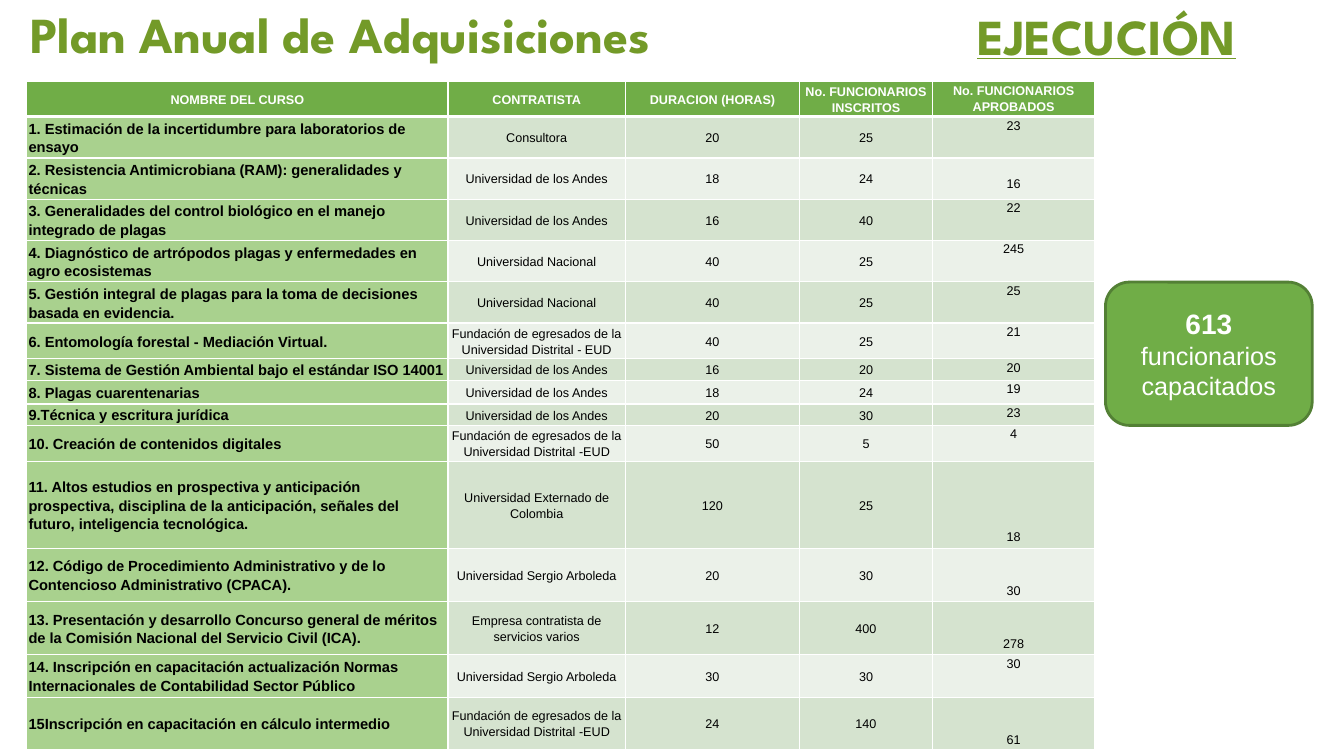
"""Build the annual procurement plan slide with its table of training courses."""
import pptx
import pptx.dml.color
import pptx.enum.shapes
import pptx.enum.text
import pptx.oxml
import pptx.oxml.ns
import pptx.util

Cm = pptx.util.Cm
Pt = pptx.util.Pt
RGBColor = pptx.dml.color.RGBColor
PP_ALIGN = pptx.enum.text.PP_ALIGN
MSO_ANCHOR = pptx.enum.text.MSO_ANCHOR

WHITE = RGBColor(0xFF, 0xFF, 0xFF)
BLACK = RGBColor(0x00, 0x00, 0x00)
OLIVE = RGBColor(0x73, 0x9A, 0x28)
GREEN = RGBColor(0x70, 0xAD, 0x47)
DARK_GREEN = RGBColor(0x53, 0x80, 0x35)
COURSE_GREEN = RGBColor(0xA9, 0xD1, 0x8E)
ODD_BAND = RGBColor(0xD5, 0xE3, 0xCF)
EVEN_BAND = RGBColor(0xEB, 0xF1, 0xE9)

ANDES = "Universidad de los Andes"
NACIONAL = "Universidad Nacional"
ARBOLEDA = "Universidad Sergio Arboleda"
EGRESADOS = "Fundación de egresados de la Universidad Distrital -EUD"

HEADERS = ["NOMBRE DEL CURSO", "CONTRATISTA", "DURACION (HORAS)",
           "No. FUNCIONARIOS\vINSCRITOS", "No. FUNCIONARIOS APROBADOS"]
COLUMN_WIDTHS = [10.62, 4.47, 4.39, 3.35, 4.09]
HEADER_HEIGHT = 0.87
APPROVED_LINE = 0.42

COURSES = [
    (1.04, 0, "1. Estimación de la incertidumbre para laboratorios de ensayo",
     "Consultora", 20, 25, 23),
    (1.04, 1, "2. Resistencia Antimicrobiana (RAM): generalidades y técnicas",
     ANDES, 18, 24, 16),
    (1.04, 0, "3. Generalidades del control biológico en el manejo integrado de plagas",
     ANDES, 16, 40, 22),
    (1.04, 0, "4. Diagnóstico de artrópodos plagas y enfermedades en agro ecosistemas",
     NACIONAL, 40, 25, 245),
    (1.04, 0, "5. Gestión integral de plagas para la toma de decisiones basada en evidencia.",
     NACIONAL, 40, 25, 25),
    (0.9, 0, "6. Entomología forestal - Mediación Virtual.",
     "Fundación de egresados de la Universidad Distrital - EUD", 40, 25, 21),
    (0.54, 0, "7. Sistema de Gestión Ambiental bajo el estándar ISO 14001",
     ANDES, 16, 20, 20),
    (0.6, 0, "8. Plagas cuarentenarias", ANDES, 18, 24, 19),
    (0.54, 0, "9.Técnica y escritura jurídica", ANDES, 20, 30, 23),
    (0.9, 0, "10. Creación de contenidos digitales", EGRESADOS, 50, 5, 4),
    (2.2, 4, "11. Altos estudios en prospectiva y anticipación prospectiva, disciplina "
     "de la anticipación, señales del futuro, inteligencia tecnológica.",
     "Universidad Externado de Colombia", 120, 25, 18),
    (1.34, 2, "12. Código de Procedimiento Administrativo y de lo Contencioso "
     "Administrativo (CPACA).", ARBOLEDA, 20, 30, 30),
    (1.34, 2, "13. Presentación y desarrollo Concurso general de méritos de la Comisión "
     "Nacional del Servicio Civil (ICA).",
     "Empresa contratista de servicios varios", 12, 400, 278),
    (1.07, 0, "14. Inscripción en capacitación actualización Normas Internacionales de "
     "Contabilidad Sector Público", ARBOLEDA, 30, 30, 30),
    (1.32, 2, "15Inscripción en capacitación en cálculo intermedio",
     EGRESADOS, 24, 140, 61),
]


class PlanSlide:
    """Hold the slide and its style, with one method per kind of element."""

    heading_font = "League Spartan"
    body_font = "Arial"

    def __init__(self, deck):
        self.slide = deck.slides.add_slide(deck.slide_layouts[6])

    def style(self, font, name, size, color, bold=False):
        font.name, font.size, font.bold = name, Pt(size), bold
        font.color.rgb = color

    def heading(self, text, left, top, width, height, inset=0.0, spacing=1.0,
                align=PP_ALIGN.LEFT, underline=False):
        frame = self.slide.shapes.add_textbox(
            Cm(left), Cm(top), Cm(width), Cm(height)).text_frame
        frame.word_wrap = True
        frame.margin_left = frame.margin_right = Cm(0)
        frame.margin_top = frame.margin_bottom = Cm(inset)
        line = frame.paragraphs[0]
        line.text, line.alignment, line.line_spacing = text, align, spacing
        self.style(line.font, self.heading_font, 36, OLIVE, True)
        line.font.underline = underline

    def border(self, cell, **widths):
        for side in "LRTB":
            edge = pptx.oxml.parse_xml(
                f'<a:ln{side} {pptx.oxml.ns.nsdecls("a")} w="{Pt(widths.get(side, 1))}">'
                f'<a:solidFill><a:srgbClr val="{WHITE}"/></a:solidFill></a:ln{side}>')
            cell._tc.get_or_add_tcPr().append(edge)

    def cell(self, cell, text, fill, color=BLACK, size=9, bold=False,
             align=PP_ALIGN.CENTER, anchor=MSO_ANCHOR.MIDDLE, top=0.0, **widths):
        cell.margin_left = cell.margin_right = Cm(0.05)
        cell.margin_top, cell.margin_bottom = Cm(top), Cm(0)
        cell.vertical_anchor = anchor
        self.border(cell, **widths)
        cell.fill.solid()
        cell.fill.fore_color.rgb = fill
        cell.text = str(text)
        for line in cell.text_frame.paragraphs:
            line.alignment, line.line_spacing = align, 1.15
            self.style(line.font, self.body_font, size, color, bold)

    def course_table(self, left, top):
        heights = [HEADER_HEIGHT] + [course[0] for course in COURSES]
        table = self.slide.shapes.add_table(
            len(heights), len(HEADERS), Cm(left), Cm(top),
            Cm(sum(COLUMN_WIDTHS)), Cm(sum(heights))).table
        for column, width in zip(table.columns, COLUMN_WIDTHS):
            column.width = Cm(width)
        for row, height in zip(table.rows, heights):
            row.height = Cm(height)
        for column, header in enumerate(HEADERS):
            anchor = MSO_ANCHOR.TOP if column == 4 else MSO_ANCHOR.MIDDLE
            self.cell(table.cell(0, column), header, GREEN, WHITE, bold=True,
                      anchor=anchor, B=3)
        for row, (_, lines_above, course, *details, approved) in enumerate(COURSES, 1):
            band = ODD_BAND if row % 2 else EVEN_BAND
            edge = {"T": 3 if row == 1 else 1}
            self.cell(table.cell(row, 0), course, COURSE_GREEN, size=10.5, bold=True,
                      align=PP_ALIGN.LEFT, **edge)
            for column, detail in enumerate(details, 1):
                self.cell(table.cell(row, column), detail, band, **edge)
            self.cell(table.cell(row, 4), approved, band, anchor=MSO_ANCHOR.TOP,
                      top=lines_above * APPROVED_LINE, **edge)

    def callout(self, figure, caption, left, top, width, height):
        badge = self.slide.shapes.add_shape(
            pptx.enum.shapes.MSO_SHAPE.ROUNDED_RECTANGLE,
            Cm(left), Cm(top), Cm(width), Cm(height))
        badge.shadow.inherit = False
        badge.fill.solid()
        badge.fill.fore_color.rgb = GREEN
        badge.line.color.rgb = DARK_GREEN
        badge.line.width = Pt(2)
        frame = badge.text_frame
        frame.word_wrap = True
        frame.vertical_anchor = MSO_ANCHOR.MIDDLE
        line = frame.paragraphs[0]
        line.alignment = PP_ALIGN.CENTER
        for text, size, bold in ((figure, 20, True), (caption, 18, False)):
            run = line.add_run()
            run.text = text
            self.style(run.font, self.body_font, size, WHITE, bold)


def main():
    deck = pptx.Presentation()
    deck.slide_width, deck.slide_height = Cm(33.87), Cm(19.05)
    plan = PlanSlide(deck)
    plan.heading("Plan Anual de Adquisiciones", 0.76, 0.25, 20, 1.5, spacing=0.9)
    plan.heading("EJECUCIÓN", 23.77, 0, 8.23, 1.8, inset=0.13,
                 align=PP_ALIGN.CENTER, underline=True)
    plan.course_table(0.67, 2.06)
    plan.callout("613 ", "funcionarios capacitados", 27.86, 7.11, 5.21, 3.61)
    deck.save("out.pptx")


if __name__ == "__main__":
    main()
